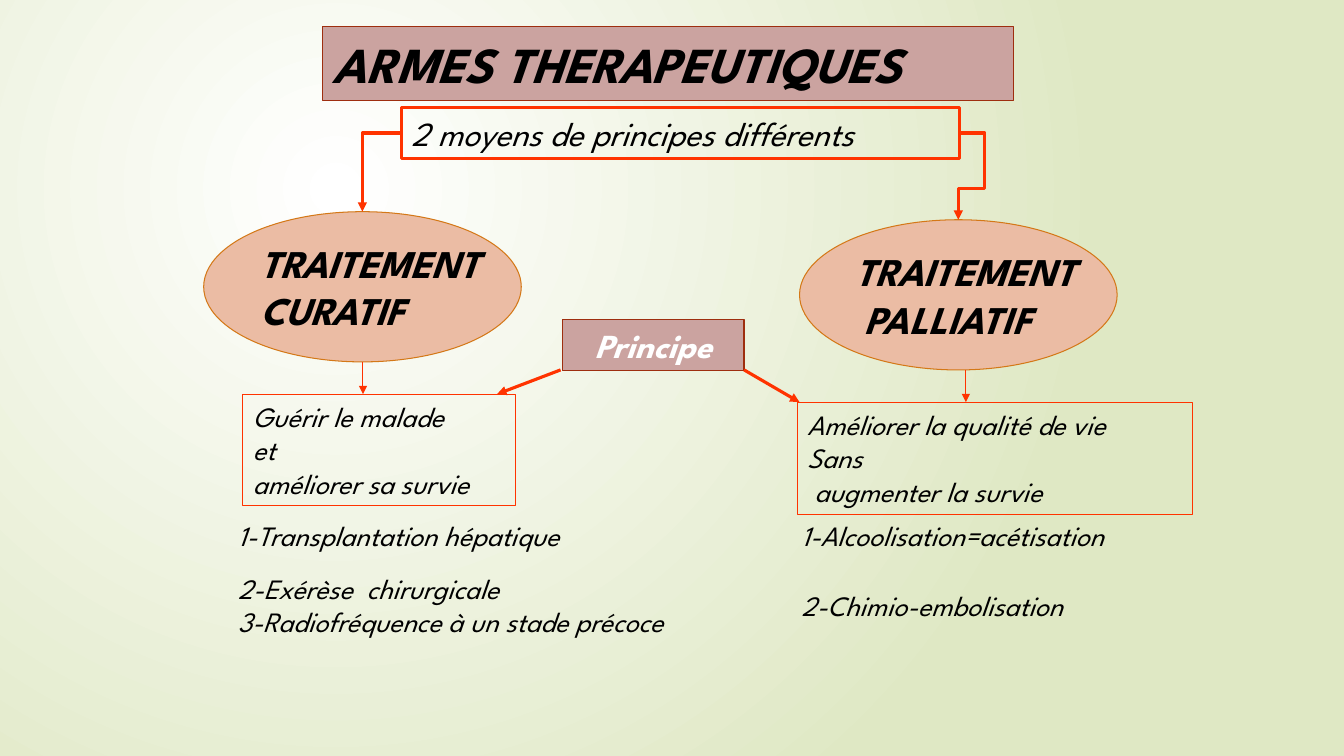
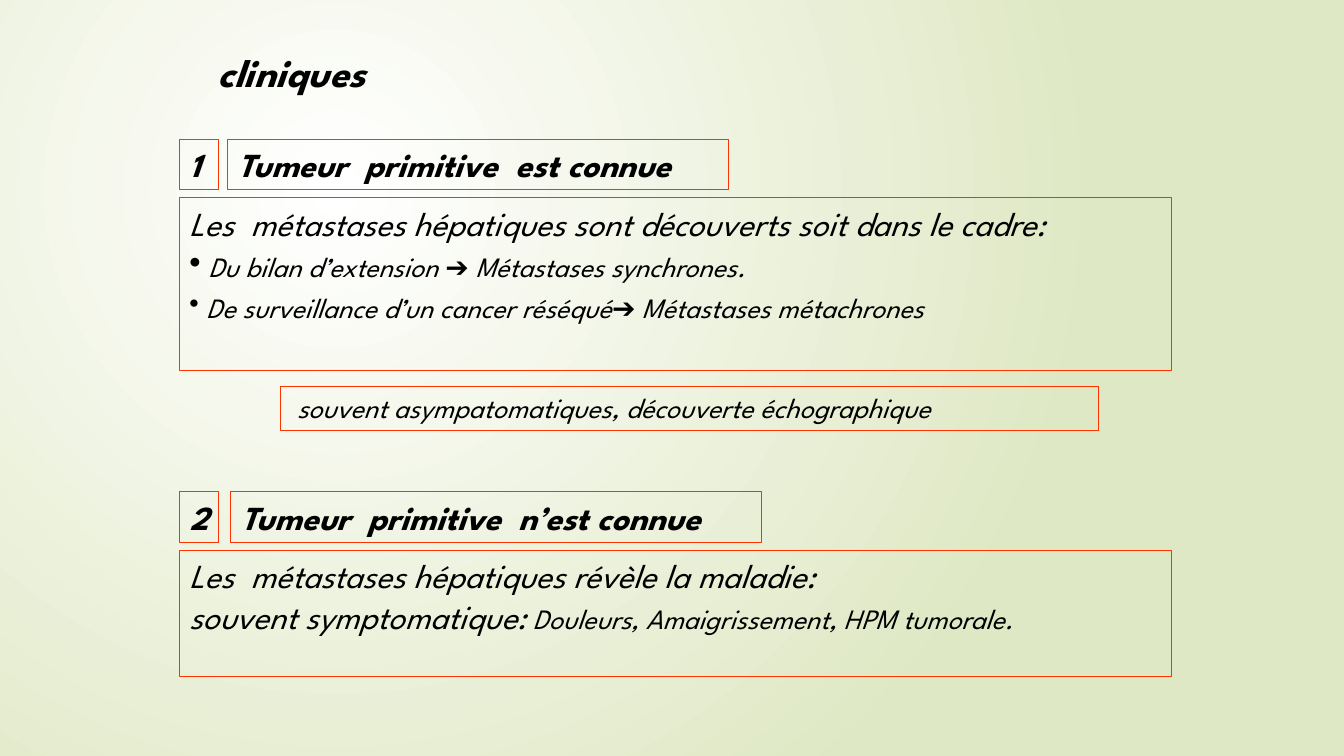
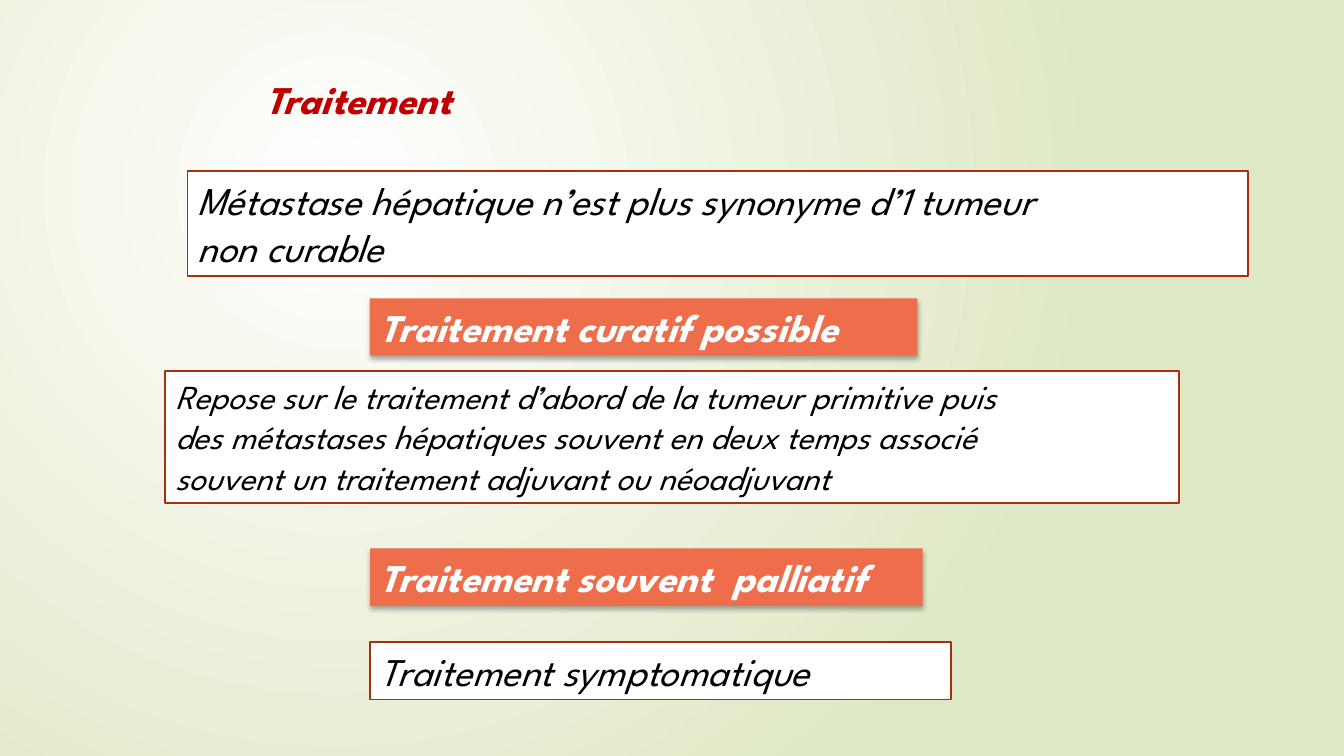
from dataclasses import dataclass, replace
from typing import NamedTuple

from lxml.etree import SubElement
from pptx import Presentation
from pptx.dml.color import RGBColor
from pptx.enum.shapes import MSO_CONNECTOR, MSO_SHAPE
from pptx.enum.text import MSO_ANCHOR, PP_ALIGN
from pptx.oxml.ns import qn
from pptx.util import Pt

PX = 9144


@dataclass(frozen=True)
class Style:
    """Type size, colour and weight of a run."""

    size: int
    color: str = "000000"
    bold: bool = False


@dataclass(frozen=True)
class Theme:
    """Colours, type styles and line weights shared by the slides."""

    font: str = "League Spartan"
    paper: str = "FFFFFF"
    meadow: str = "DFE8C4"
    flame: str = "FF3300"
    rose: str = "CBA3A0"
    brick: str = "9E2E0F"
    rust: str = "A53010"
    peach: str = "EBBCA4"
    amber: str = "D47817"
    coral: str = "EE6E4B"
    shade: str = "000000"
    thin: float = 0.75
    medium: float = 1.25
    thick: float = 2.25
    small: Style = Style(20)
    body: Style = Style(24)
    large: Style = Style(28)
    label: Style = Style(24, bold=True)
    heading: Style = Style(28, bold=True)
    title: Style = Style(36, bold=True)


THEME = Theme()
WHITE_LABEL = replace(THEME.label, color=THEME.paper)
WHITE_HEADING = replace(THEME.heading, color=THEME.paper)
RED_HEADING = replace(THEME.heading, color="C00000")


class Box(NamedTuple):
    """Left, top, width and height in px."""

    left: int
    top: int
    width: int
    height: int

    def inner(self, left, top, width, height):
        """Return a box placed relative to this one."""
        return Box(self.left + left, self.top + top, width, height)

    def emu(self):
        """Return the four lengths in EMU."""
        return [length * PX for length in self]


@dataclass(frozen=True)
class Para:
    """Runs of one paragraph with its spacing, indent and bullet size."""

    runs: tuple
    before: int = 0
    indent: int = 0
    bullet: int = 0


def para(text, style, **layout):
    """Return a paragraph made of one run."""
    return Para(((text, style),), **layout)


def lines(style, *texts):
    """Return one paragraph per text."""
    return [para(text, style) for text in texts]


def write(frame, paragraphs, align=PP_ALIGN.LEFT, wrap=True):
    """Fill a text frame run by run."""
    frame.word_wrap = wrap
    for index, content in enumerate(paragraphs):
        paragraph = frame.add_paragraph() if index else frame.paragraphs[0]
        paragraph.alignment = align
        properties = paragraph._p.get_or_add_pPr()
        if content.indent:
            properties.set("marL", str(content.indent * PX))
        if content.bullet:
            properties.set("indent", str(-content.indent * PX))
            SubElement(properties, qn("a:buSzPct"), val=str(content.bullet * 1000))
            SubElement(properties, qn("a:buChar"), char="•")
        if content.before:
            paragraph.space_before = Pt(content.before)
        for text, style in content.runs:
            run = paragraph.add_run()
            run.text = text
            run.font.name = THEME.font
            run.font.size = Pt(style.size)
            run.font.bold = style.bold
            run.font.italic = True
            run.font.color.rgb = RGBColor.from_string(style.color)


def note(slide, box, paragraphs):
    """Place free text without a frame."""
    write(slide.shapes.add_textbox(*box.emu()).text_frame, paragraphs)


def panel(slide, box, paragraphs, fill=None, line=THEME.flame, weight=THEME.thin,
          form=MSO_SHAPE.RECTANGLE, anchor=MSO_ANCHOR.TOP, **layout):
    """Place a framed or filled shape holding text."""
    frame = slide.shapes.add_shape(form, *box.emu())
    frame.shadow.inherit = False
    if fill:
        frame.fill.solid()
        frame.fill.fore_color.rgb = RGBColor.from_string(fill)
    else:
        frame.fill.background()
    if line:
        frame.line.color.rgb = RGBColor.from_string(line)
        frame.line.width = Pt(weight)
    else:
        frame.line.fill.background()
    frame.text_frame.vertical_anchor = anchor
    write(frame.text_frame, paragraphs, **layout)
    return frame


def arrow(slide, start=(0, 0), end=(0, 0), weight=THEME.thin, kind=MSO_CONNECTOR.STRAIGHT):
    """Draw a flame-coloured arrow between two points."""
    link = slide.shapes.add_connector(kind, *[length * PX for length in (*start, *end)])
    link.line.color.rgb = RGBColor.from_string(THEME.flame)
    link.line.width = Pt(weight)
    SubElement(link.line._get_or_add_ln(), qn("a:tailEnd"), type="triangle")
    SubElement(link._element.spPr, qn("a:effectLst"))
    return link


def branch(slide, source, side, target, bend, reach=0, drop=0):
    """Join a side of the source to the top of the target by a bent arrow."""
    link = arrow(slide, weight=THEME.thick, kind=MSO_CONNECTOR.ELBOW)
    link.begin_connect(source, side)
    link.end_connect(target, 0)
    outline = link._element.spPr.find(qn("a:prstGeom"))
    outline.set("prst", bend)
    if reach:
        guides = outline.find(qn("a:avLst"))
        if guides is None:
            guides = SubElement(outline, qn("a:avLst"))
        ratios = (-reach * PX / link.width, drop * PX / link.height)
        for number, ratio in enumerate(ratios, 1):
            SubElement(guides, qn("a:gd"), name=f"adj{number}",
                       fmla=f"val {round(ratio * 100000)}")


def treatment(slide, box, name, goal_box, goal, arrow_shift):
    """Place a treatment oval, its goal and the arrow between; return the oval."""
    oval = panel(slide, box, name, THEME.peach, THEME.amber, form=MSO_SHAPE.OVAL,
                 anchor=MSO_ANCHOR.MIDDLE, wrap=False)
    goal_place = box.inner(*goal_box)
    panel(slide, goal_place, goal)
    x = box.left + arrow_shift
    arrow(slide, (x, box.top + box.height), (x, goal_place.top))
    return oval


def therapies(slide, box):
    """Build the slide comparing curative and palliative treatment."""
    panel(slide, box.inner(320, 26, 685, 74), lines(THEME.title, "ARMES THERAPEUTIQUES"),
          THEME.rose, THEME.brick, anchor=MSO_ANCHOR.MIDDLE)
    means = panel(slide, box.inner(398, 107, 554, 50),
                  lines(THEME.body, "2 moyens de principes différents"), weight=THEME.thick)
    curative = treatment(
        slide, box.inner(202, 210, 315, 149), lines(THEME.heading, "TRAITEMENT", "CURATIF"),
        (39, 181, 270, 111),
        lines(THEME.small, "Guérir le malade", "et", "améliorer sa survie"), 158)
    palliative = treatment(
        slide, box.inner(793, 218, 315, 149),
        [para("TRAITEMENT", THEME.heading), para("PALLIATIF", THEME.heading, indent=8)],
        (-2, 181, 392, 111),
        [*lines(THEME.small, "Améliorer la qualité de vie", "Sans"),
         para("augmenter la survie", THEME.small, indent=7)], 165)
    branch(slide, means, 1, curative, "bentConnector2")
    branch(slide, means, 3, palliative, "bentConnector4", reach=25, drop=55)
    panel(slide, box.inner(558, 317, 180, 51), lines(WHITE_LABEL, "Principe"),
          THEME.rose, THEME.brick, align=PP_ALIGN.CENTER)
    for start, end in (((556, 367), (493, 391)), ((738, 367), (793, 399))):
        arrow(slide, start, end, THEME.thick)
    note(slide, box.inner(226, 509, 548, 131), [
        para("1-Transplantation hépatique", THEME.small),
        para("2-Exérèse  chirurgicale", THEME.small, before=14),
        para("3-Radiofréquence à un stade précoce", THEME.small)])
    note(slide, box.inner(785, 509, 394, 114), [
        para("1-Alcoolisation=acétisation", THEME.small),
        para("2-Chimio-embolisation", THEME.small, before=26)])


def finding(slide, box, number, name, name_left, name_width, details):
    """Place a numbered heading above its details."""
    panel(slide, box.inner(0, 0, 39, 50), lines(THEME.label, number))
    panel(slide, box.inner(name_left, 0, name_width, 50), lines(THEME.label, name))
    panel(slide, box.inner(0, 58, box.width, box.height - 58), details)


def clinical(slide, box):
    """Build the slide on clinical findings."""
    note(slide, box.inner(198, 43, 211, 57), [para("cliniques", THEME.heading, indent=8)])
    finding(slide, box.inner(178, 138, 984, 230), "1", "Tumeur  primitive  est connue", 48, 497, [
        para("Les  métastases hépatiques sont découverts soit dans le cadre:", THEME.body),
        para("Du bilan d’extension ➔ Métastases synchrones.", THEME.small,
             before=5, indent=19, bullet=120),
        para("De surveillance d’un cancer réséqué➔ Métastases métachrones", THEME.small,
             before=5, indent=17, bullet=100)])
    panel(slide, box.inner(278, 383, 812, 44),
          [para("souvent asympatomatiques, découverte échographique", THEME.small, indent=7)])
    finding(slide, box.inner(178, 488, 984, 183), "2", "Tumeur  primitive  n’est connue", 51, 526, [
        para("Les  métastases hépatiques révèle la maladie:", THEME.body),
        Para((("souvent symptomatique:", THEME.body),
              (" Douleurs, Amaigrissement, HPM tumorale.", THEME.small)))])


def card(slide, box, style, *texts):
    """Place a white card with a rust outline."""
    panel(slide, box, lines(style, *texts), THEME.paper, THEME.rust, THEME.medium)


def banner(slide, box, text):
    """Place a coral banner with a soft shadow below."""
    strip = panel(slide, box, lines(WHITE_HEADING, text), THEME.coral, None)
    effects = strip._element.spPr.find(qn("a:effectLst"))
    shadow = SubElement(effects, qn("a:outerShdw"), blurRad=str(Pt(3.5)), dist=str(Pt(2.2)),
                        dir="5400000", algn="ctr", rotWithShape="0")
    tint = SubElement(shadow, qn("a:srgbClr"), val=THEME.shade)
    SubElement(tint, qn("a:alpha"), val="32000")


def management(slide, box):
    """Build the slide on the treatment of metastases."""
    note(slide, box.inner(253, 70, 258, 57), lines(RED_HEADING, "Traitement"))
    card(slide, box.inner(186, 170, 1052, 104), THEME.large,
         "Métastase hépatique n’est plus synonyme d’1 tumeur", "non curable")
    banner(slide, box.inner(367, 296, 543, 57), "Traitement curatif possible")
    card(slide, box.inner(164, 368, 1005, 131), THEME.body,
         "Repose sur le traitement d’abord de la tumeur primitive puis",
         "des métastases hépatiques souvent en deux temps associé",
         "souvent un traitement adjuvant ou néoadjuvant")
    banner(slide, box.inner(367, 544, 548, 57), "Traitement souvent  palliatif")
    card(slide, box.inner(367, 637, 576, 57), THEME.large, "Traitement symptomatique")


def paint_background(master):
    """Give the master a radial gradient from white to meadow green."""
    fill = master.background.fill
    fill.gradient()
    for stop, color in zip(fill.gradient_stops, (THEME.paper, THEME.meadow)):
        stop.color.rgb = RGBColor.from_string(color)
    gradient = next(master.element.iter(qn("a:gradFill")))
    gradient.remove(gradient.find(qn("a:lin")))
    circle = SubElement(gradient, qn("a:path"), path="circle")
    SubElement(circle, qn("a:fillToRect"), l="50000", t="50000", r="100000", b="100000")


def main():
    """Build and save the presentation."""
    deck = Presentation()
    page = Box(0, 0, 1333, 750)
    deck.slide_width, deck.slide_height = page.width * PX, page.height * PX
    paint_background(deck.slide_master)
    for build in (therapies, clinical, management):
        build(deck.slides.add_slide(deck.slide_layouts[6]), page)
    deck.save("out.pptx")


if __name__ == "__main__":
    main()
